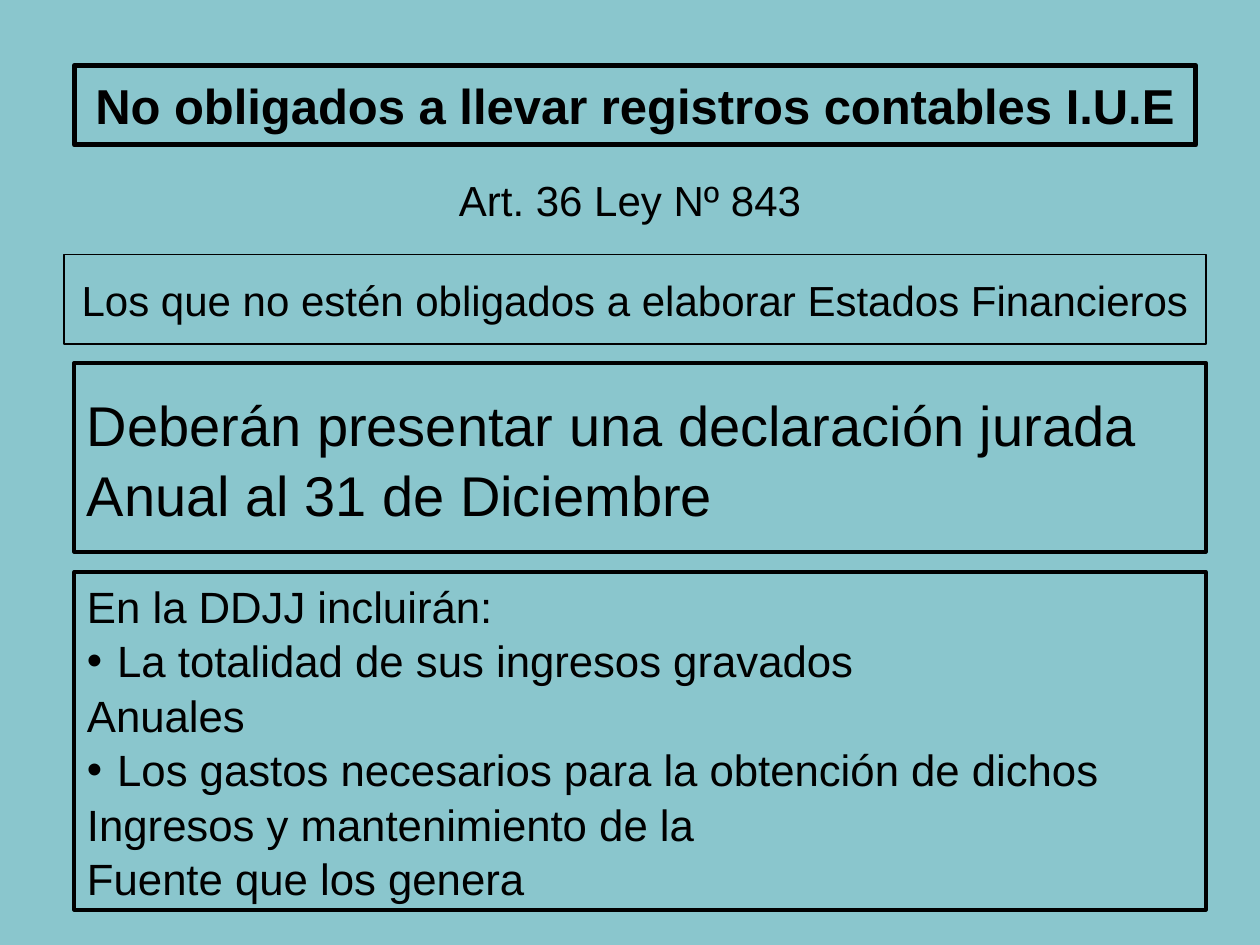
from pptx import Presentation
from pptx.dml.color import RGBColor
from pptx.enum.shapes import MSO_SHAPE
from pptx.enum.text import MSO_ANCHOR, MSO_AUTO_SIZE, PP_ALIGN
from pptx.oxml.ns import qn
from pptx.util import Inches, Pt
from lxml.etree import SubElement

BACKGROUND = RGBColor(0x8A, 0xC6, 0xCD)
BLACK = RGBColor(0, 0, 0)
FONT = "Arial"
BULLET_INDENT = Inches(0.24)

TITLE = "No obligados a llevar registros contables I.U.E"
ARTICLE = "Art. 36 Ley Nº 843"
SUBJECTS = "Los que no estén obligados a elaborar Estados Financieros"
DECLARATION = ["Deberán presentar una declaración jurada", "Anual al 31 de Diciembre"]
CONTENTS = [
    "En la DDJJ incluirán:",
    "• La totalidad de sus ingresos gravados",
    "Anuales",
    "• Los gastos necesarios para la obtención de dichos",
    "Ingresos y mantenimiento de la",
    "Fuente que los genera",
]


def place(shape, left, top, width, height):
    shape.left, shape.top = Inches(left), Inches(top)
    shape.width, shape.height = Inches(width), Inches(height)


def outline(shape, width):
    shape.fill.background()
    shape.line.color.rgb = BLACK
    shape.line.width = Pt(width)


def set_bullet(paragraph, bulleted):
    properties = paragraph._p.get_or_add_pPr()
    indent = BULLET_INDENT if bulleted else 0
    properties.set("marL", str(indent))
    properties.set("indent", str(-indent))
    if bulleted:
        SubElement(properties, qn("a:buChar")).set("char", "•")
    else:
        SubElement(properties, qn("a:buNone"))


def write(shape, lines, size, alignment=PP_ALIGN.LEFT, bold=False, spacing=1.0):
    frame = shape.text_frame
    frame.word_wrap = True
    frame.auto_size = MSO_AUTO_SIZE.NONE
    frame.vertical_anchor = MSO_ANCHOR.MIDDLE
    for index, line in enumerate(lines):
        paragraph = frame.add_paragraph() if index else frame.paragraphs[0]
        paragraph.alignment = alignment
        paragraph.line_spacing = spacing
        paragraph.space_before = paragraph.space_after = Pt(0)
        set_bullet(paragraph, line.startswith("• "))
        run = paragraph.add_run()
        run.text = line.removeprefix("• ")
        run.font.name = FONT
        run.font.size = Pt(size)
        run.font.bold = bold
        run.font.color.rgb = BLACK


def add_box(slide, position, line_width):
    box = slide.shapes.add_shape(MSO_SHAPE.RECTANGLE, *map(Inches, position))
    box.shadow.inherit = False
    outline(box, line_width)
    return box


def main():
    presentation = Presentation()
    presentation.slide_width, presentation.slide_height = Inches(10), Inches(7.5)
    slide = presentation.slides.add_slide(presentation.slide_layouts[1])
    slide.background.fill.solid()
    slide.background.fill.fore_color.rgb = BACKGROUND

    title = slide.shapes.title
    place(title, 0.59, 0.52, 8.9, 0.63)
    geometry = SubElement(title._element.spPr, qn("a:prstGeom"))
    geometry.set("prst", "roundRect")
    SubElement(geometry, qn("a:avLst"))
    outline(title, 3)
    write(title, [TITLE], 28, PP_ALIGN.CENTER, bold=True)

    article = slide.shapes.add_textbox(*map(Inches, (0.59, 1.31, 8.82, 0.55)))
    write(article, [ARTICLE], 24, PP_ALIGN.CENTER)

    subjects = add_box(slide, (0.51, 2.02, 9.06, 0.71), 1)
    write(subjects, [SUBJECTS], 24, PP_ALIGN.CENTER)

    declaration = add_box(slide, (0.59, 2.88, 8.98, 1.5), 2.25)
    write(declaration, DECLARATION, 32, spacing=1.04)

    contents = slide.placeholders[1]
    place(contents, 0.59, 4.54, 8.98, 2.68)
    outline(contents, 2.25)
    write(contents, CONTENTS, 25, spacing=1.04)

    presentation.save("out.pptx")


if __name__ == "__main__":
    main()
